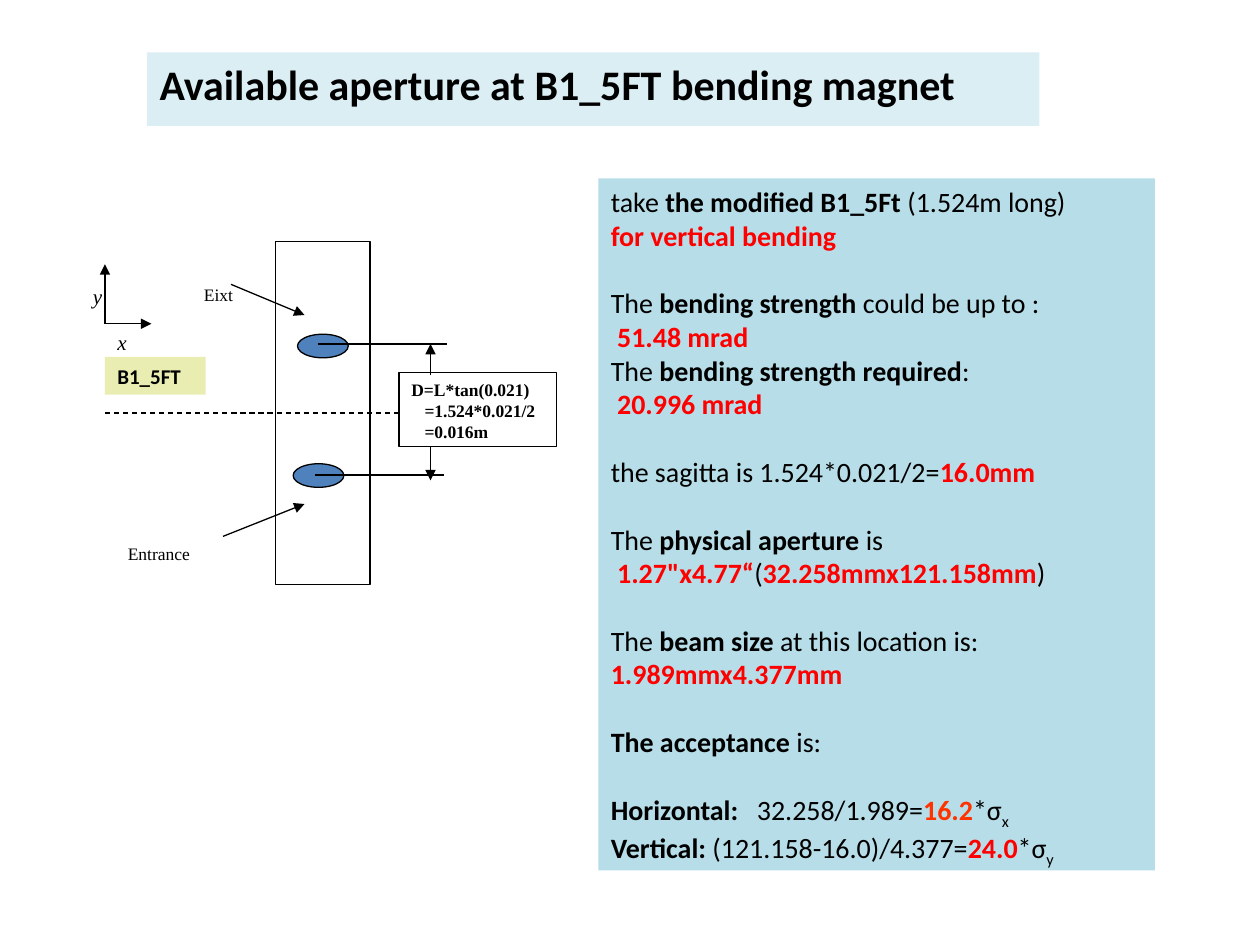
import pptx
import pptx.util
import pptx.dml.color
import pptx.enum.dml
import pptx.enum.shapes
import pptx.enum.text
import pptx.oxml
import pptx.oxml.ns
from lxml import etree

Pt = pptx.util.Pt
SHAPE = pptx.enum.shapes.MSO_SHAPE
COLORS = {"black": "000000", "white": "FFFFFF", "blue": "4F81BD",
          "panel": "B7DEE8", "title": "DBEEF4", "tag": "E9EDB1",
          "red": "FF0000", "orange": "FF3300"}
SERIF = "Times New Roman"
SANS = "Calibri"

NOTES = [
    (0, [("take ", ""), ("the modified B1_5Ft", "bold"), (" (1.524m long)", "")]),
    (0, [("for vertical bending", "red")]),
    (1, [("The ", ""), ("bending strength", "bold"), (" could be up to :", "")]),
    (0, [(" 51.48 mrad", "red")]),
    (0, [("The ", ""), ("bending strength required", "bold"), (":", "")]),
    (0, [(" 20.996 mrad", "red")]),
    (1, [("the sagitta is 1.524*0.021/2=", ""), ("16.0mm", "red")]),
    (1, [("The ", ""), ("physical aperture ", "bold"), ("is", "")]),
    (0, [(' 1.27"x4.77“', "red"), ("(", ""),
         ("32.258mmx121.158mm", "red"), (")", "")]),
    (1, [("The ", ""), ("beam size", "bold"), (" at this location is:", "")]),
    (0, [("1.989mmx4.377mm", "red")]),
    (1, [("The acceptance", "bold"), (" is:", "")]),
    (1, [("Horizontal:", "bold"), ("\t32.258/1.989=", ""),
         ("16.2", "orange"), ("*σ", ""), ("x", "sub")]),
    (0, [("Vertical:", "bold"), (" (121.158-16.0)/4.377=", ""),
         ("24.0", "red"), ("*σ", ""), ("y", "sub")]),
]


def rgb(name):
    return pptx.dml.color.RGBColor.from_string(COLORS[name])


def style(para, font, size, bold=False, slant=False):
    para.alignment = pptx.enum.text.PP_ALIGN.LEFT
    para.font.name = font
    para.font.size = Pt(size)
    para.font.bold = bold
    para.font.italic = slant
    para.font.color.rgb = rgb("black")


def paint(shape, fill, line=None):
    if fill:
        shape.fill.solid()
        shape.fill.fore_color.rgb = rgb(fill)
    else:
        shape.fill.background()
    if line:
        shape.line.color.rgb = rgb(line)
        shape.line.width = Pt(0.75)
    else:
        shape.line.fill.background()


def add_box(slide, box, fill, line=None, kind=SHAPE.RECTANGLE):
    shape = slide.shapes.add_shape(kind, *map(Pt, box))
    shape.shadow.inherit = False
    paint(shape, fill, line)
    shape.text_frame.word_wrap = True
    shape.text_frame.vertical_anchor = pptx.enum.text.MSO_ANCHOR.TOP
    return shape


def add_label(slide, text, box, fill=None, font=SERIF, size=10, line=None,
              bold=False, slant=False):
    shape = add_box(slide, box, fill, line)
    frame = shape.text_frame
    frame.margin_right = 0
    frame.text = text
    for para in frame.paragraphs:
        style(para, font, size, bold, slant)
    return shape


def add_line(slide, ends, arrow=False, dash=False):
    line = slide.shapes.add_connector(
        pptx.enum.shapes.MSO_CONNECTOR.STRAIGHT, *map(Pt, ends))
    line.line.color.rgb = rgb("black")
    line.line.width = Pt(0.75)
    if dash:
        line.line.dash_style = pptx.enum.dml.MSO_LINE.DASH
    props = line._element.spPr
    if arrow:
        tail = etree.SubElement(props.find(pptx.oxml.ns.qn("a:ln")),
                                pptx.oxml.ns.qn("a:tailEnd"))
        tail.set("type", "triangle")
    etree.SubElement(props, pptx.oxml.ns.qn("a:effectLst"))


def add_title(slide):
    title = slide.shapes.title
    title.left, title.top, title.width, title.height = map(Pt, (84, 30, 510, 42))
    paint(title, "title")
    frame = title.text_frame
    frame.text = "Available aperture at B1_5FT bending magnet"
    frame.word_wrap = True
    frame.auto_size = pptx.enum.text.MSO_AUTO_SIZE.NONE
    frame.vertical_anchor = pptx.enum.text.MSO_ANCHOR.TOP
    style(frame.paragraphs[0], SANS, 24, True)


def add_run(para, text, look):
    run = para.add_run()
    run.text = text
    if look in ("bold", "red", "orange"):
        run.font.bold = True
    if look in ("red", "orange"):
        run.font.color.rgb = rgb(look)
    if look == "sub":
        run.font._element.set("baseline", "-25000")


def add_tab(para, place):
    tabs = pptx.oxml.parse_xml(
        f'<a:tabLst {pptx.oxml.ns.nsdecls("a")}>'
        f'<a:tab pos="{Pt(place)}" algn="l"/></a:tabLst>')
    para._p.get_or_add_pPr().find(pptx.oxml.ns.qn("a:defRPr")).addprevious(tabs)


def add_notes(slide):
    frame = add_box(slide, (342, 102, 318, 395.5), "panel").text_frame
    for i, (gap, runs) in enumerate(NOTES):
        para = frame.add_paragraph() if i else frame.paragraphs[0]
        style(para, SANS, 16)
        para.space_before = Pt(19.5 * gap)
        for text, look in runs:
            add_run(para, text, look)
        if any("\t" in text for text, look in runs):
            add_tab(para, 83.5)


def add_sketch(slide):
    add_box(slide, (157.5, 138, 54, 196), "white", "black")
    add_line(slide, (60, 236, 302, 236), dash=True)
    add_label(slide, "x", (60, 185, 13.5, 13.5), size=12, slant=True)
    add_label(slide, "y", (46, 158.5, 13.5, 20), size=12, slant=True)
    add_label(slide, "Entrance", (66, 306.5, 61, 20), "white")
    add_label(slide, "Eixt", (109.5, 159, 47.5, 13.5), "white")
    for left, top in ((167.5, 265), (170, 191)):
        add_box(slide, (left, top, 29, 13.5), "blue", "black", SHAPE.OVAL)
    for ends in ((180, 271.5, 254, 271.5), (181.5, 196.5, 255.5, 196.5)):
        add_line(slide, ends)
    for ends in ((60, 185, 60, 151), (60, 185, 86.5, 185),
                 (132, 162.5, 174, 180), (127.5, 306.5, 174, 288),
                 (246, 251, 246, 274.5)):
        add_line(slide, ends, arrow=True)
    sums = add_label(slide, "D=L*tan(0.021)\n=1.524*0.021/2\n=0.016m",
                     (228, 213, 90, 42), "white", line="black", bold=True)
    for para in sums.text_frame.paragraphs[1:]:
        para._p.get_or_add_pPr().set("marL", str(Pt(7.5)))
    add_label(slide, "B1_5FT", (60, 204, 57.5, 21.5), "tag", SANS, 12, bold=True)
    add_line(slide, (246, 214.5, 246, 196.5), arrow=True)


def main():
    deck = pptx.Presentation()
    deck.slide_width, deck.slide_height = Pt(720), Pt(540)
    slide = deck.slides.add_slide(deck.slide_layouts[5])
    add_title(slide)
    add_sketch(slide)
    add_notes(slide)
    deck.save("out.pptx")


if __name__ == "__main__":
    main()
